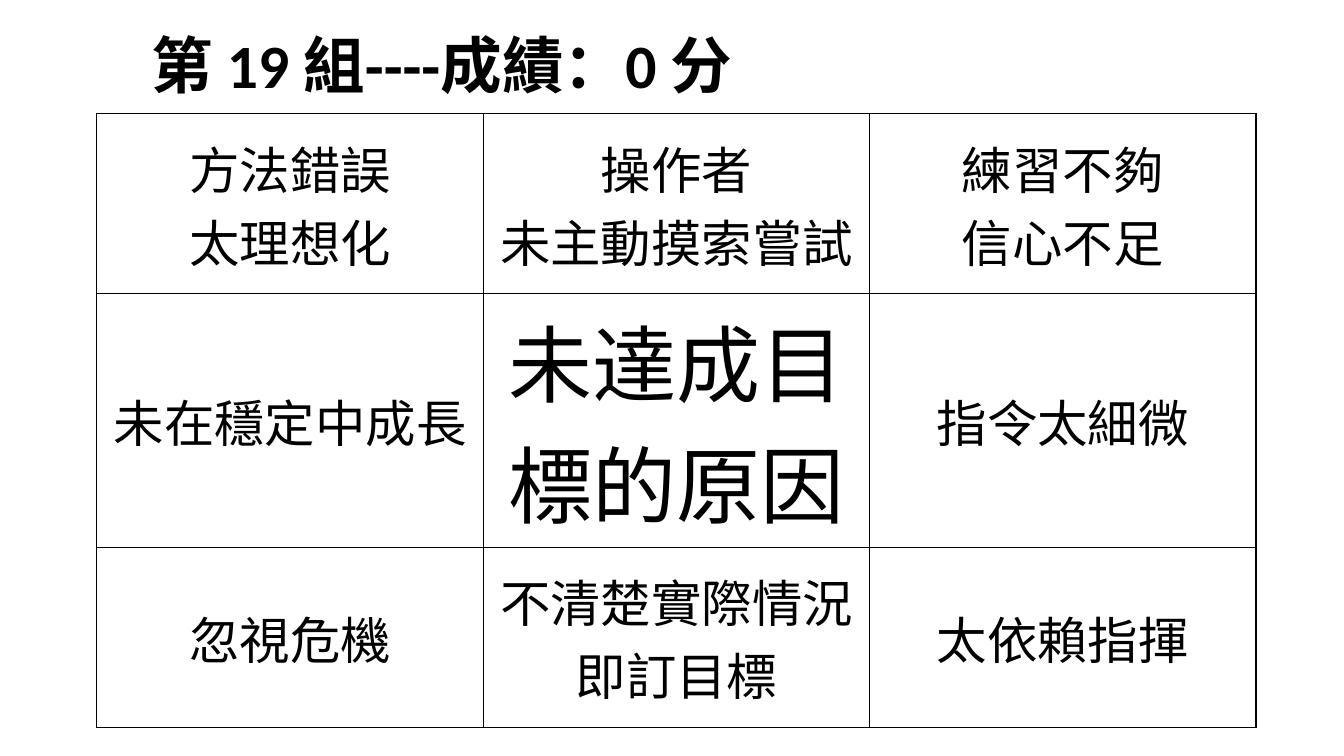
from lxml.etree import SubElement
from pptx import Presentation
from pptx.dml.color import RGBColor
from pptx.enum.text import MSO_ANCHOR, MSO_AUTO_SIZE, PP_ALIGN
from pptx.oxml.ns import qn
from pptx.util import Pt

COLORS = {"ink": "000000", "paper": "FFFFFF"}
FONT = "Calibri"
REASONS = [
    ["方法錯誤\n太理想化", "操作者\n未主動摸索嘗試", "練習不夠\n信心不足"],
    ["未在穩定中成長", "未達成目標的原因", "指令太細微"],
    ["忽視危機", "不清楚實際情況即訂目標", "太依賴指揮"],
]
ROW_HEIGHTS = [128.6, 145, 128.6]


def format_text(tf, size, align, bold=False):
    for p in tf.paragraphs:
        p.alignment = align
        for r in p.runs:
            r.font.name = FONT
            r.font.size = Pt(size)
            r.font.bold = bold
            r.font.color.rgb = RGBColor.from_string(COLORS["ink"])


def add_borders(cell):
    tcPr = cell._tc.get_or_add_tcPr()
    for side in ("a:lnL", "a:lnR", "a:lnT", "a:lnB"):
        ln = SubElement(tcPr, qn(side), w=str(Pt(1)))
        fill = SubElement(ln, qn("a:solidFill"))
        SubElement(fill, qn("a:srgbClr"), val=COLORS["ink"])


prs = Presentation()
prs.slide_width, prs.slide_height = Pt(960), Pt(540)
s = prs.slides.add_slide(prs.slide_layouts[5])
s.background.fill.solid()
s.background.fill.fore_color.rgb = RGBColor.from_string(COLORS["paper"])

title = s.shapes.title
title.left, title.top, title.width, title.height = Pt(100.8), Pt(-2.9), Pt(751), Pt(104.4)
tf = title.text_frame
tf.text = "第 19 組----成績：0 分"
tf.word_wrap = True
tf.auto_size = MSO_AUTO_SIZE.NONE
tf.vertical_anchor = MSO_ANCHOR.MIDDLE
tf.paragraphs[0].line_spacing = 0.9
format_text(tf, 44, PP_ALIGN.LEFT, bold=True)

table = s.shapes.add_table(3, 3, Pt(69.2), Pt(81.2), Pt(828), Pt(sum(ROW_HEIGHTS))).table
table.first_row = False
table.horz_banding = False
for col in table.columns:
    col.width = Pt(276)
for row, height in zip(table.rows, ROW_HEIGHTS):
    row.height = Pt(height)

for i, reasons in enumerate(REASONS):
    for j, reason in enumerate(reasons):
        cell = table.cell(i, j)
        cell.text_frame.text = reason
        cell.vertical_anchor = MSO_ANCHOR.MIDDLE
        add_borders(cell)
        cell.fill.background()
        format_text(cell.text_frame, 60 if i == j == 1 else 36, PP_ALIGN.CENTER)

prs.save("out.pptx")
